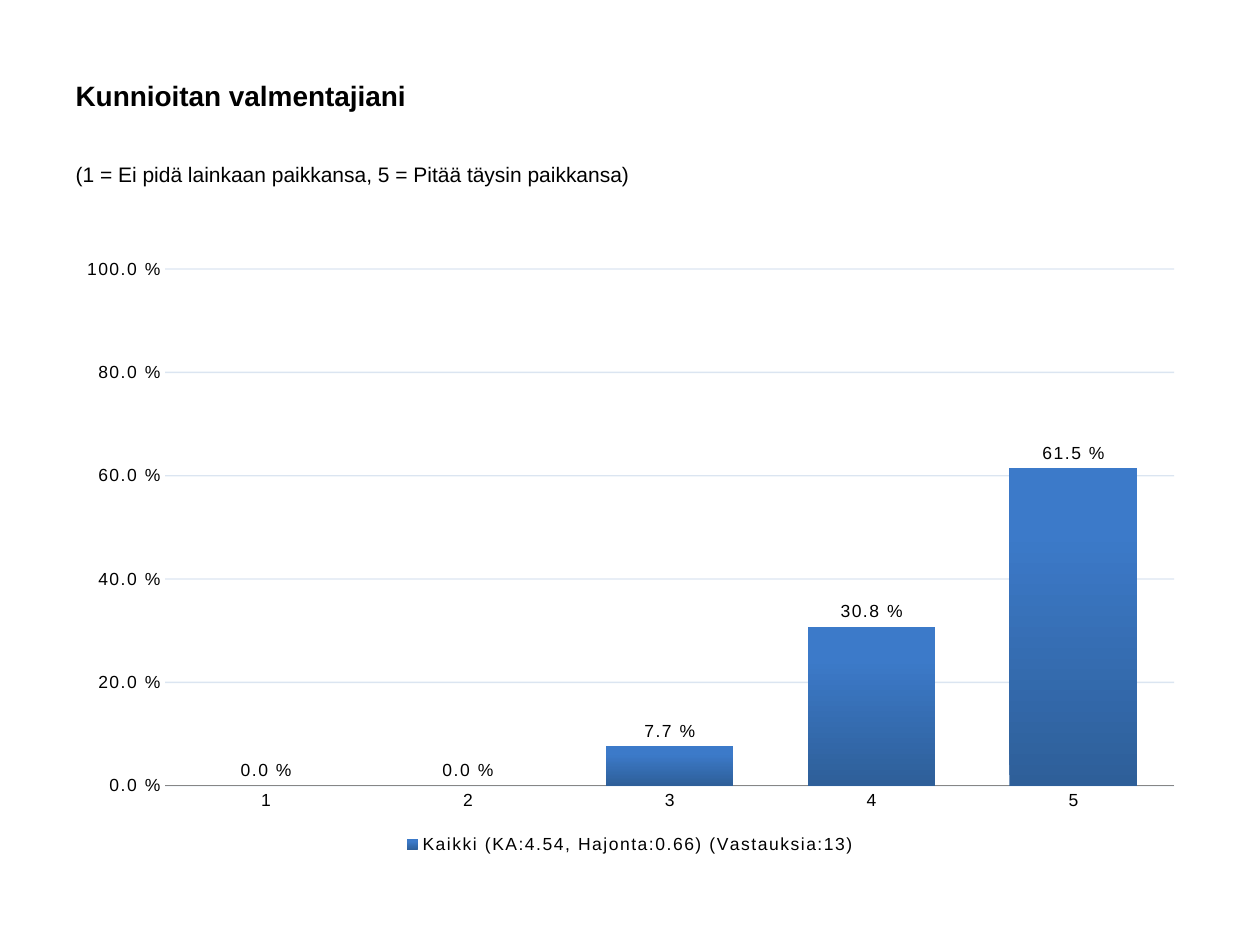
from lxml.etree import SubElement
from pptx import Presentation
from pptx.chart.data import CategoryChartData
from pptx.dml.color import RGBColor
from pptx.enum.chart import XL_CHART_TYPE, XL_LABEL_POSITION, XL_LEGEND_POSITION, XL_TICK_MARK
from pptx.enum.text import MSO_ANCHOR, PP_ALIGN
from pptx.oxml import parse_xml
from pptx.oxml.ns import nsdecls, qn
from pptx.util import Cm, Pt

LEFT, WIDTH = Cm(1.27), Cm(22.86)
PERCENT = r"0.0\ %"
CHART_TEXT = {"name": "Arial", "size": Pt(10), "bold": False}
PLOT_AREA = {"x": 0.09, "y": 0.04, "w": 0.89, "h": 0.84}


def set_color(color_holder, hex_value):
    color_holder.rgb = RGBColor.from_string(hex_value)


def format_font(font, values):
    for name, value in values.items():
        setattr(font, name, value)
    set_color(font.color, "000000")


def fill_placeholder(shape, text, top, height, anchor, font_values):
    shape.left, shape.top, shape.width, shape.height = LEFT, top, WIDTH, height
    frame = shape.text_frame
    frame.text = text
    frame.word_wrap = True
    frame.vertical_anchor = anchor
    paragraph = frame.paragraphs[0]
    paragraph.alignment = PP_ALIGN.LEFT
    format_font(paragraph.runs[0].font, font_values)
    return paragraph


def remove_bullet(paragraph):
    properties = paragraph._p.get_or_add_pPr()
    properties.set("marL", "0")
    properties.set("indent", "0")
    SubElement(properties, qn("a:buNone"))


def format_axes(chart):
    for axis in (chart.category_axis, chart.value_axis):
        axis.major_tick_mark = axis.minor_tick_mark = XL_TICK_MARK.NONE
        format_font(axis.tick_labels.font, CHART_TEXT)
    set_color(chart.category_axis.format.line.color, "868686")

    value_axis = chart.value_axis
    scale = {"minimum_scale": 0, "maximum_scale": 1, "major_unit": 0.2}
    for name, value in scale.items():
        setattr(value_axis, name, value)
    value_axis.tick_labels.number_format = PERCENT
    value_axis.tick_labels.number_format_is_linked = False
    value_axis.format.line.fill.background()

    grid = value_axis.major_gridlines
    grid.format.line.width = Pt(0.75)
    set_color(grid.format.line.color, "4F81BD")
    for color in value_axis.major_gridlines.format.line._ln.iter(qn("a:srgbClr")):
        SubElement(color, qn("a:alpha"), val="20000")


def format_columns(plot):
    plot.gap_width = 58
    plot.vary_by_categories = False
    fill = plot.series[0].format.fill
    fill.gradient()
    fill.gradient_angle = 90
    for stop, position, color in zip(fill.gradient_stops, (0, 0.8), ("2E5F99", "3C7AC9")):
        stop.position = position
        set_color(stop.color, color)

    plot.has_data_labels = True
    labels = plot.data_labels
    labels.show_value = True
    labels.number_format = PERCENT
    labels.number_format_is_linked = False
    labels.position = XL_LABEL_POSITION.OUTSIDE_END
    format_font(labels.font, CHART_TEXT)


def place_plot_area(chart):
    """Fix the inner plot area, as fractions of the chart."""
    plot_area = chart.element.find(".//" + qn("c:plotArea"))
    for layout in plot_area.findall(qn("c:layout")):
        plot_area.remove(layout)
    modes = '<c:xMode val="edge"/><c:yMode val="edge"/>'
    sizes = "".join(f'<c:{name} val="{value}"/>' for name, value in PLOT_AREA.items())
    plot_area.insert(0, parse_xml(
        f'<c:layout {nsdecls("c")}><c:manualLayout><c:layoutTarget val="inner"/>'
        f"{modes}{sizes}</c:manualLayout></c:layout>"))


def add_answer_chart(slide):
    data = CategoryChartData(number_format=PERCENT)
    data.categories = ["1", "2", "3", "4", "5"]
    data.add_series("Kaikki (KA:4.54, Hajonta:0.66) (Vastauksia:13)",
                    (0, 0, 0.077, 0.308, 0.615))
    chart = slide.shapes.add_chart(XL_CHART_TYPE.COLUMN_CLUSTERED, LEFT, Cm(4.93),
                                   WIDTH, Cm(12.4), data).chart
    chart.has_title = False
    format_font(chart.font, {"name": "Calibri", "size": Pt(10)})
    format_axes(chart)
    format_columns(chart.plots[0])
    chart.has_legend = True
    chart.legend.position = XL_LEGEND_POSITION.BOTTOM
    chart.legend.include_in_layout = False
    format_font(chart.legend.font, CHART_TEXT)
    place_plot_area(chart)
    for properties in chart.element.iter(qn("a:defRPr")):
        properties.set("spc", "100")


def main():
    presentation = Presentation()
    presentation.slide_width, presentation.slide_height = Cm(25.4), Cm(19.05)
    slide = presentation.slides.add_slide(presentation.slide_layouts[1])
    fill_placeholder(slide.shapes.title, "Kunnioitan valmentajiani", Cm(0.91), Cm(2.01),
                     MSO_ANCHOR.MIDDLE, {"name": "Arial", "size": Pt(16), "bold": True})
    scale_note = fill_placeholder(
        slide.placeholders[1], "(1 = Ei pidä lainkaan paikkansa, 5 = Pitää täysin paikkansa)",
        Cm(3.12), Cm(1.5), MSO_ANCHOR.TOP, {"name": "Arial", "size": Pt(12)})
    remove_bullet(scale_note)
    add_answer_chart(slide)
    presentation.save("out.pptx")


if __name__ == "__main__":
    main()
